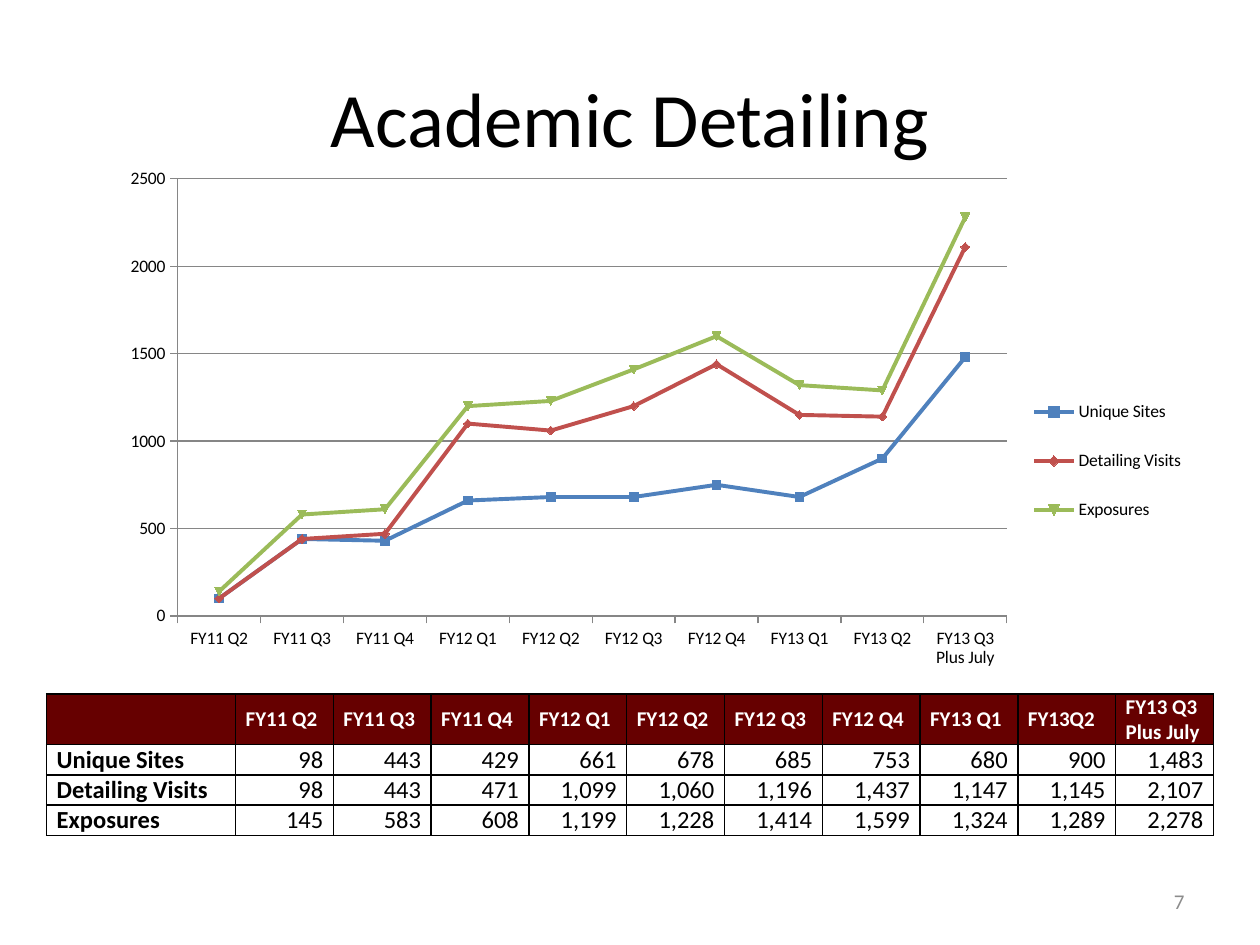
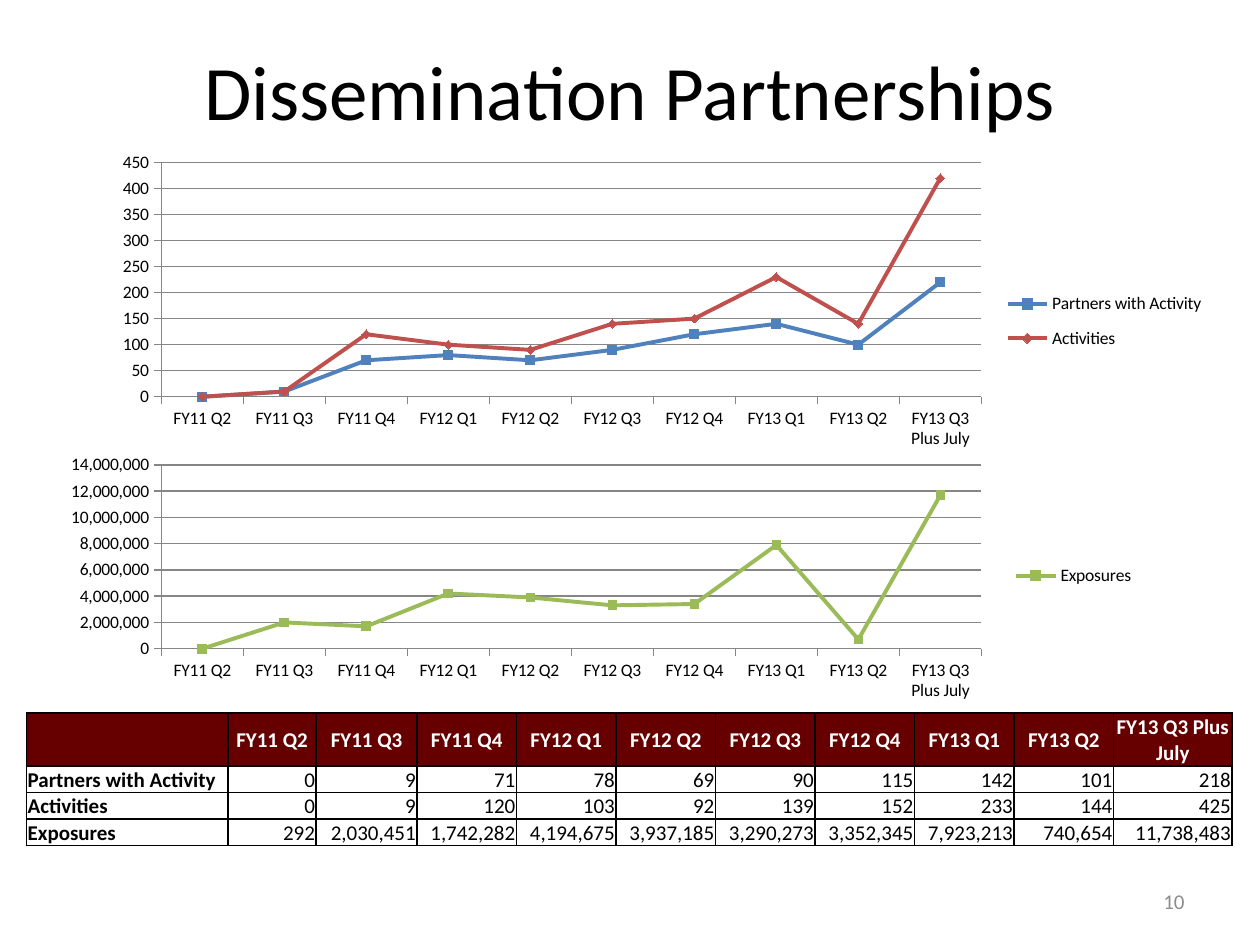
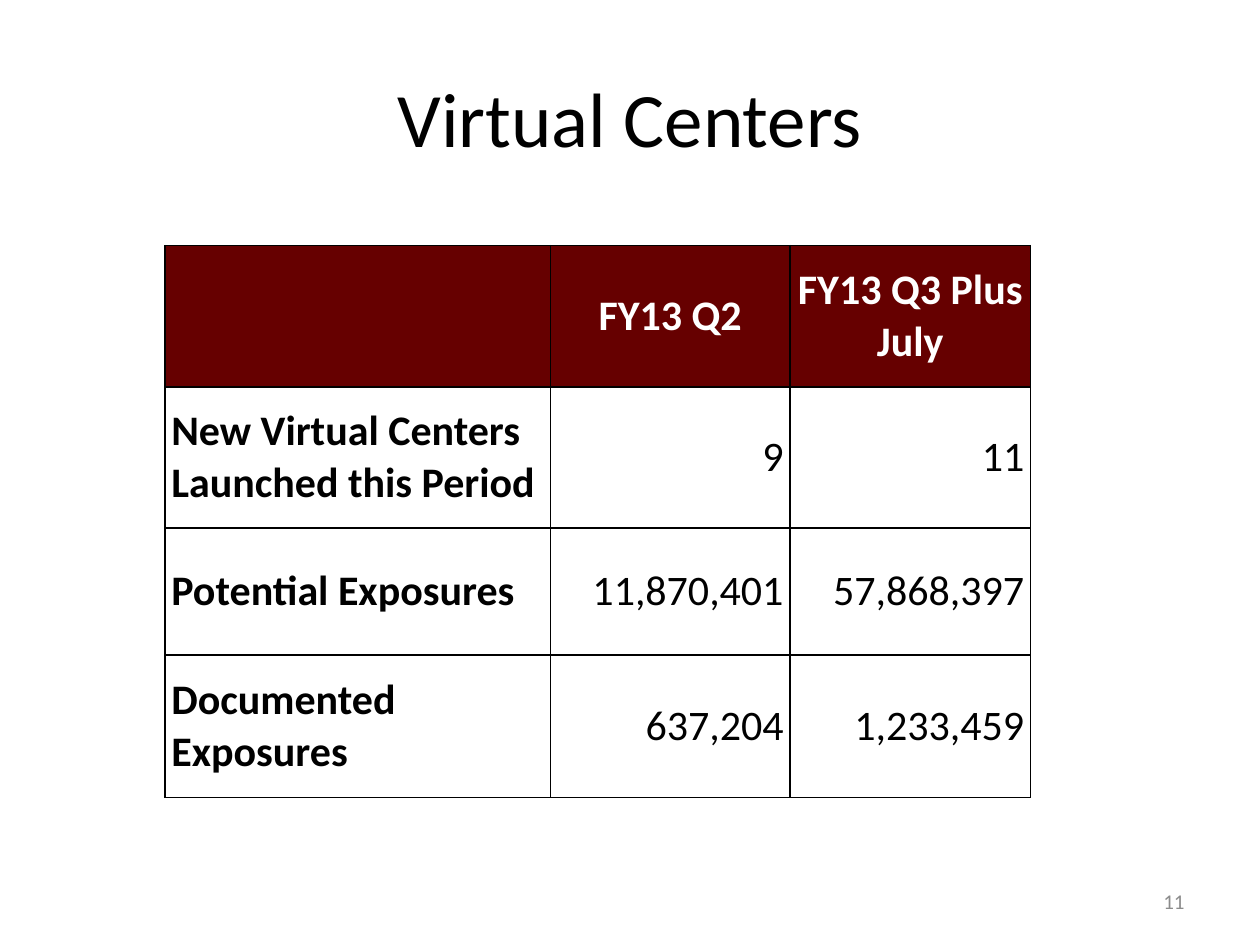
import pptx
import pptx.chart.data
import pptx.dml.color
import pptx.enum.chart
import pptx.enum.text
import pptx.oxml
import pptx.oxml.ns
import pptx.util

Inches = pptx.util.Inches
Pt = pptx.util.Pt
ALIGN = pptx.enum.text.PP_ALIGN
MIDDLE = pptx.enum.text.MSO_ANCHOR.MIDDLE

# Shared style
FONT = "Calibri"
COLORS = {
    "text": "000000",
    "white": "FFFFFF",
    "header": "660000",
    "number": "8C8C8C",
    "axis": "868686",
    "blue": "4F81BD",
    "red": "C0504D",
    "green": "9BBB59",
}

# Quarterly figures, used by both tables and charts
QUARTERS = ["FY11 Q2", "FY11 Q3", "FY11 Q4", "FY12 Q1", "FY12 Q2", "FY12 Q3",
            "FY12 Q4", "FY13 Q1", "FY13 Q2", "FY13 Q3 Plus July"]
DETAILING = {
    "Unique Sites": [98, 443, 429, 661, 678, 685, 753, 680, 900, 1483],
    "Detailing Visits": [98, 443, 471, 1099, 1060, 1196, 1437, 1147, 1145, 2107],
    "Exposures": [145, 583, 608, 1199, 1228, 1414, 1599, 1324, 1289, 2278],
}
PARTNERSHIPS = {
    "Partners with Activity": [0, 9, 71, 78, 69, 90, 115, 142, 101, 218],
    "Activities": [0, 9, 120, 103, 92, 139, 152, 233, 144, 425],
    "Exposures": [292, 2030451, 1742282, 4194675, 3937185, 3290273, 3352345,
                  7923213, 740654, 11738483],
}
CENTERS = {
    "New Virtual Centers Launched this Period": [9, 11],
    "Potential Exposures": [11870401, 57868397],
    "Documented Exposures": [637204, 1233459],
}


def rgb(name):
    return pptx.dml.color.RGBColor.from_string(COLORS[name])


def set_font(font, size, color, bold=False):
    font.name, font.size, font.bold = FONT, Pt(size), bold
    font.color.rgb = rgb(color)


def add_text(slide, text, box, size, color, align):
    tf = slide.shapes.add_textbox(*map(Inches, box)).text_frame
    tf.word_wrap = True
    tf.vertical_anchor = MIDDLE
    p = tf.paragraphs[0]
    p.text, p.alignment = text, align
    set_font(p.font, size, color)


def add_slide(prs, title, number, title_top=0.3):
    slide = prs.slides.add_slide(prs.slide_layouts[6])
    add_text(slide, title, (0.5, title_top, 9, 1.25), 44, "text", ALIGN.CENTER)
    add_text(slide, str(number), (7.17, 6.95, 2.33, 0.4), 12, "number", ALIGN.RIGHT)
    return slide


# Tables
def add_borders(cell):
    tcPr = cell._tc.get_or_add_tcPr()
    for side in ("lnL", "lnR", "lnT", "lnB"):
        tcPr.append(pptx.oxml.parse_xml(
            f'<a:{side} {pptx.oxml.ns.nsdecls("a")} w="{Pt(1)}"><a:solidFill>'
            f'<a:srgbClr val="{COLORS["text"]}"/></a:solidFill></a:{side}>'))


def fill_cell(cell, text, size, align, margins, header=False, bold=False):
    (cell.margin_left, cell.margin_top,
     cell.margin_right, cell.margin_bottom) = map(Inches, margins)
    cell.vertical_anchor = MIDDLE
    add_borders(cell)
    if header:
        cell.fill.solid()
        cell.fill.fore_color.rgb = rgb("header")
    else:
        cell.fill.background()
    p = cell.text_frame.paragraphs[0]
    p.text, p.alignment = text, align
    set_font(p.font, size, "white" if header else "text", bold)


def add_table(slide, at, widths, heights, headings, data, margins,
              header_size, body_size, header_align=ALIGN.CENTER):
    table = slide.shapes.add_table(
        len(heights), len(widths), *map(Inches, at),
        Inches(sum(widths)), Inches(sum(heights))).table
    table.first_row = table.horz_banding = False
    for column, width in zip(table.columns, widths):
        column.width = Inches(width)
    for row, height in zip(table.rows, heights):
        row.height = Inches(height)
    for c, heading in enumerate([""] + headings):
        fill_cell(table.cell(0, c), heading, header_size, header_align, margins,
                  header=True, bold=True)
    for r, (label, values) in enumerate(data.items(), 1):
        fill_cell(table.cell(r, 0), label, body_size, ALIGN.LEFT, margins, bold=True)
        for c, value in enumerate(values, 1):
            fill_cell(table.cell(r, c), f"{value:,}", body_size, ALIGN.RIGHT, margins)


# Charts
def layout_xml(area, box, inner=False):
    """Manual layout for an area given in slide inches."""
    x, y, w, h = area
    left, top, width, height = box
    parts = {"x": (x - left) / width, "y": (y - top) / height,
             "w": w / width, "h": h / height}
    target = '<c:layoutTarget val="inner"/>' if inner else ""
    modes = '<c:xMode val="edge"/><c:yMode val="edge"/>'
    sizes = "".join(f'<c:{k} val="{v:.4f}"/>' for k, v in parts.items())
    return pptx.oxml.parse_xml(
        f'<c:layout {pptx.oxml.ns.nsdecls("c")}><c:manualLayout>'
        f'{target}{modes}{sizes}</c:manualLayout></c:layout>')


def style_axis(axis):
    axis.major_tick_mark = pptx.enum.chart.XL_TICK_MARK.OUTSIDE
    axis.minor_tick_mark = pptx.enum.chart.XL_TICK_MARK.NONE
    axis.format.line.color.rgb = rgb("axis")
    axis.format.line.width = Pt(0.75)


def add_line_chart(slide, box, plot_area, legend_area, data, colors,
                   digits=-1, number_format="General"):
    chart_data = pptx.chart.data.CategoryChartData()
    chart_data.categories = QUARTERS
    for name, values in data.items():
        chart_data.add_series(name, [round(v, digits) for v in values])
    chart = slide.shapes.add_chart(
        pptx.enum.chart.XL_CHART_TYPE.LINE_MARKERS,
        *map(Inches, box), chart_data).chart
    set_font(chart.font, 10, "text")
    chart.has_title = False

    # Axes and gridlines
    style_axis(chart.category_axis)
    axis = chart.value_axis
    style_axis(axis)
    axis.tick_labels.number_format = number_format
    axis.tick_labels.number_format_is_linked = False
    axis.has_major_gridlines = True
    axis.major_gridlines.format.line.color.rgb = rgb("axis")
    axis.major_gridlines.format.line.width = Pt(0.75)

    # Series
    plot = chart.plots[0]
    plot.vary_by_categories = False
    for series, color in zip(plot.series, colors):
        series.smooth = False
        series.format.line.color.rgb = rgb(color)
        series.format.line.width = Pt(2.25)
        series.marker.format.fill.solid()
        series.marker.format.fill.fore_color.rgb = rgb(color)
        series.marker.format.line.color.rgb = rgb(color)

    # Legend and plot placement
    chart.has_legend = True
    legend = chart.legend
    legend.position = pptx.enum.chart.XL_LEGEND_POSITION.RIGHT
    legend.include_in_layout = False
    qn = pptx.oxml.ns.qn
    for old in legend._element.findall(qn("c:layout")):
        legend._element.remove(old)
    legend._element.find(qn("c:legendPos")).addnext(layout_xml(legend_area, box))
    plot_xml = chart._chartSpace.chart.plotArea
    for old in plot_xml.findall(qn("c:layout")):
        plot_xml.remove(old)
    plot_xml.insert(0, layout_xml(plot_area, box, inner=True))


# Slides
def academic_detailing(prs):
    slide = add_slide(prs, "Academic Detailing", 7)
    headings = ["FY13Q2" if q == "FY13 Q2" else q for q in QUARTERS]
    add_table(slide, (0.37, 5.51), [1.5] + [7.76 / 10] * 10, [0.4] + [0.24] * 3,
              headings, DETAILING, (0.08, 0, 0.08, 0), 12, 14, ALIGN.LEFT)
    add_line_chart(slide, (0.86, 1.26, 8.64, 4.13), (1.41, 1.42, 6.58, 3.47),
                   (8.14, 2.96, 1.3, 1.4), DETAILING, ["blue", "red", "green"])


def dissemination_partnerships(prs):
    slide = add_slide(prs, "Dissemination Partnerships", 10, title_top=0.09)
    add_table(slide, (0.21, 5.66), [1.6, 0.7, 0.8] + [0.79] * 7 + [0.94],
              [0.42] + [0.21] * 3, QUARTERS, PARTNERSHIPS,
              (0.01, 0.01, 0.01, 0), 12, 12)
    exposures = {"Exposures": PARTNERSHIPS["Exposures"]}
    activity = {k: v for k, v in PARTNERSHIPS.items() if k not in exposures}
    add_line_chart(slide, (0.68, 1.16, 8.99, 2.57), (1.28, 1.29, 6.51, 1.86),
                   (7.94, 2.22, 1.65, 0.66), activity, ["blue", "red"])
    add_line_chart(slide, (0.5, 3.53, 9, 2.13), (1.28, 3.69, 6.51, 1.46),
                   (8.02, 4.43, 1, 0.28), exposures, ["green"],
                   digits=-5, number_format="#,##0")


def virtual_centers(prs):
    slide = add_slide(prs, "Virtual Centers", 11)
    add_table(slide, (1.31, 1.95), [3.06, 1.9, 1.91], [1.12, 1.12, 1.01, 1.13],
              QUARTERS[-2:], CENTERS, (0.05,) * 4, 24, 24)


def main():
    prs = pptx.Presentation()
    prs.slide_width, prs.slide_height = Inches(10), Inches(7.5)
    academic_detailing(prs)
    dissemination_partnerships(prs)
    virtual_centers(prs)
    prs.save("out.pptx")


if __name__ == "__main__":
    main()
